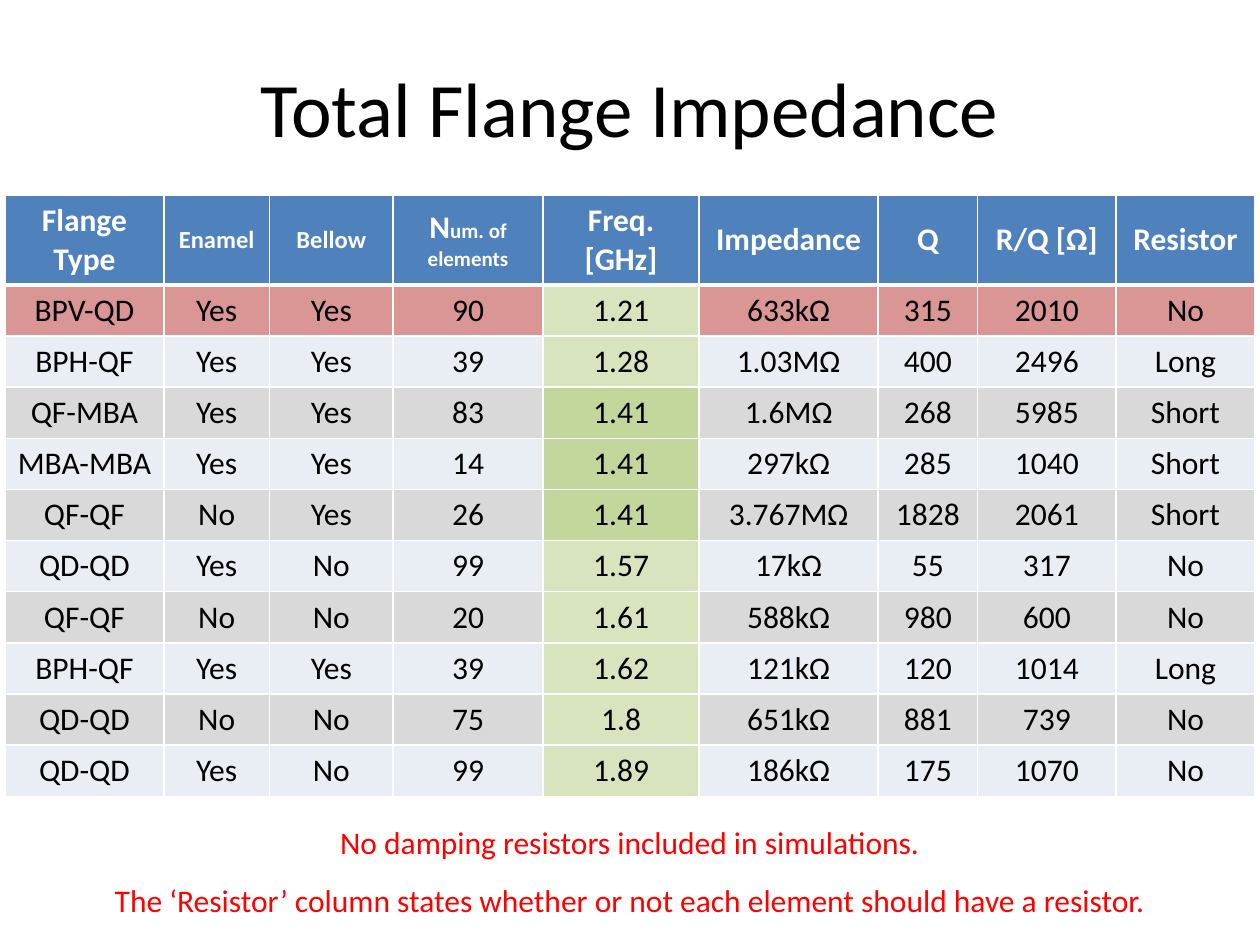
import pptx
import pptx.util
import pptx.dml.color
import pptx.enum.text
import lxml.etree
from pptx.oxml.ns import qn

RGBColor = pptx.dml.color.RGBColor
BLACK = RGBColor(0x00, 0x00, 0x00)
WHITE = RGBColor(0xFF, 0xFF, 0xFF)
RED = RGBColor(0xFF, 0x00, 0x00)
HEADER_BLUE = RGBColor(0x4F, 0x81, 0xBD)
ROSE = RGBColor(0xD9, 0x96, 0x94)
PALE_BLUE = RGBColor(0xE9, 0xED, 0xF4)
GREY = RGBColor(0xD9, 0xD9, 0xD9)
PALE_GREEN = RGBColor(0xD7, 0xE4, 0xBD)
GREEN = RGBColor(0xC3, 0xD6, 0x9B)
MIDDLE = pptx.enum.text.MSO_ANCHOR.MIDDLE

HEADERS = [
    [("Flange Type", 18)], [("Enamel", 14)], [("Bellow", 14)],
    [("N", 18), ("um. of elements", 12)], [("Freq. [GHz]", 18)],
    [("Impedance", 18)], [("Q", 18)], [("R/Q [Ω]", 18)], [("Resistor", 18)],
]
FLANGES = [
    ("BPV-QD", "Yes", "Yes", "90", "1.21", "633kΩ", "315", "2010", "No"),
    ("BPH-QF", "Yes", "Yes", "39", "1.28", "1.03MΩ", "400", "2496", "Long"),
    ("QF-MBA", "Yes", "Yes", "83", "1.41", "1.6MΩ", "268", "5985", "Short"),
    ("MBA-MBA", "Yes", "Yes", "14", "1.41", "297kΩ", "285", "1040", "Short"),
    ("QF-QF", "No", "Yes", "26", "1.41", "3.767MΩ", "1828", "2061", "Short"),
    ("QD-QD", "Yes", "No", "99", "1.57", "17kΩ", "55", "317", "No"),
    ("QF-QF", "No", "No", "20", "1.61", "588kΩ", "980", "600", "No"),
    ("BPH-QF", "Yes", "Yes", "39", "1.62", "121kΩ", "120", "1014", "Long"),
    ("QD-QD", "No", "No", "75", "1.8", "651kΩ", "881", "739", "No"),
    ("QD-QD", "Yes", "No", "99", "1.89", "186kΩ", "175", "1070", "No"),
]
COLUMN_WIDTHS = [1.26, 0.84, 0.98, 1.19, 1.24, 1.42, 0.79, 1.1, 1.1]
FREQ_COLUMN = 4
SHARED_FREQ = "1.41"
NOTES = [
    "No damping resistors included in simulations.",
    "The ‘Resistor’ column states whether or not each element should have a resistor.",
]


def write(paragraph, text, size=18, color=BLACK, bold=False):
    """Add one centred run to the paragraph."""
    paragraph.alignment = pptx.enum.text.PP_ALIGN.CENTER
    run = paragraph.add_run()
    run.text = text
    run.font.name = "Calibri"
    run.font.size = pptx.util.Pt(size)
    run.font.bold = bold
    run.font.color.rgb = color


def style_cell(cell, fill, top=1, bottom=1):
    """Centre the cell vertically, fill it and give it white borders in points."""
    cell.vertical_anchor = MIDDLE
    properties = cell._tc.get_or_add_tcPr()
    for side, width in (("L", 1), ("R", 1), ("T", top), ("B", bottom)):
        line = lxml.etree.SubElement(properties, qn(f"a:ln{side}"), w=str(pptx.util.Pt(width)))
        solid = lxml.etree.SubElement(line, qn("a:solidFill"))
        lxml.etree.SubElement(solid, qn("a:srgbClr"), val=str(WHITE))
    cell.fill.solid()
    cell.fill.fore_color.rgb = fill


deck = pptx.Presentation()
deck.slide_width = pptx.util.Inches(10)
deck.slide_height = pptx.util.Inches(7.5)
WIDTH, HEIGHT = deck.slide_width, deck.slide_height
slide = deck.slides.add_slide(deck.slide_layouts[5])

title = slide.shapes.title
title.left, title.top = 0, int(HEIGHT * 0.03)
title.width, title.height = WIDTH, pptx.util.Inches(1.25)
title.text_frame.vertical_anchor = MIDDLE
write(title.text_frame.paragraphs[0], "Total Flange Impedance", size=44)

table_height = pptx.util.Inches(4.76)
header_height = pptx.util.Inches(0.7)
impedances = slide.shapes.add_table(
    len(FLANGES) + 1, len(HEADERS), pptx.util.Inches(0.04), pptx.util.Inches(1.55),
    pptx.util.Inches(sum(COLUMN_WIDTHS)), table_height).table
for column, width in zip(impedances.columns, COLUMN_WIDTHS):
    column.width = pptx.util.Inches(width)
for row in impedances.rows:
    row.height = (table_height - header_height) // len(FLANGES)
impedances.rows[0].height = header_height

for c, runs in enumerate(HEADERS):
    cell = impedances.cell(0, c)
    style_cell(cell, HEADER_BLUE, bottom=3)
    for text, size in runs:
        write(cell.text_frame.paragraphs[0], text, size=size, color=WHITE, bold=True)

for r, flange in enumerate(FLANGES, start=1):
    band = ROSE if r == 1 else GREY if r % 2 else PALE_BLUE
    for c, value in enumerate(flange):
        fill = band
        if c == FREQ_COLUMN:
            fill = GREEN if value == SHARED_FREQ else PALE_GREEN
        cell = impedances.cell(r, c)
        style_cell(cell, fill, top=3 if r == 1 else 1)
        write(cell.text_frame.paragraphs[0], value)

remarks = slide.shapes.add_textbox(
    0, int(HEIGHT * 0.864), WIDTH, pptx.util.Inches(0.89)).text_frame
remarks.word_wrap = True
remarks.auto_size = pptx.enum.text.MSO_AUTO_SIZE.SHAPE_TO_FIT_TEXT
write(remarks.paragraphs[0], NOTES[0], color=RED)
explanation = remarks.add_paragraph()
explanation.space_before = pptx.util.Pt(12)
write(explanation, NOTES[1], color=RED)

deck.save("out.pptx")
